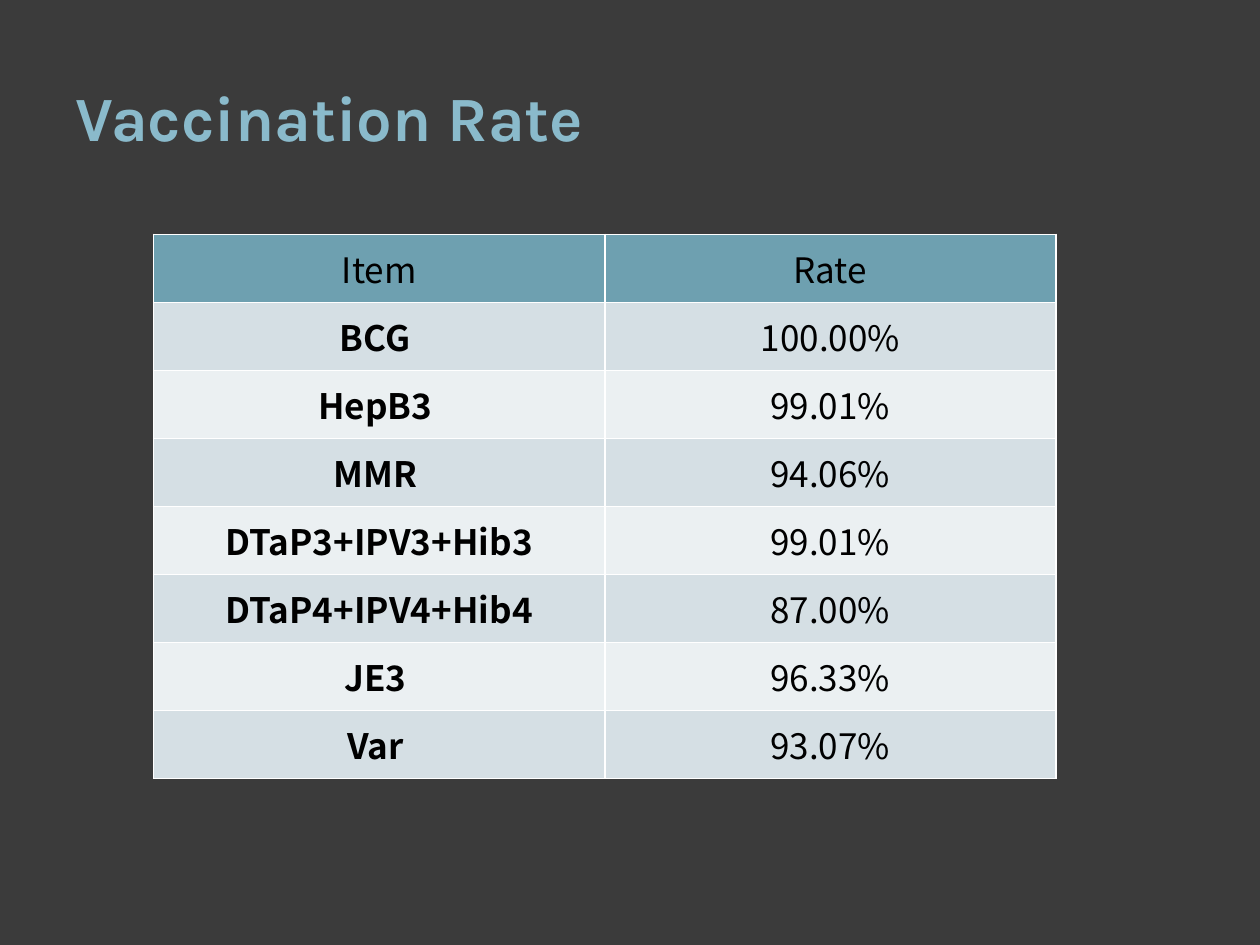
from lxml import etree
from pptx import Presentation
from pptx.dml.color import RGBColor
from pptx.enum.text import MSO_ANCHOR, PP_ALIGN
from pptx.oxml.ns import qn
from pptx.util import Inches, Pt

CENTER, LEFT = PP_ALIGN.CENTER, PP_ALIGN.LEFT
MIDDLE = MSO_ANCHOR.MIDDLE
TITLE_ONLY = 5

BACKGROUND = RGBColor(0x3B, 0x3B, 0x3B)
TITLE_BLUE = RGBColor(0x8A, 0xBA, 0xCB)
HEADER_FILL = RGBColor(0x6E, 0xA0, 0xB0)
BAND_FILLS = (RGBColor(0xEB, 0xF0, 0xF2), RGBColor(0xD5, 0xDF, 0xE4))
BLACK = RGBColor(0, 0, 0)
WHITE = RGBColor(0xFF, 0xFF, 0xFF)

TITLE_FONT = "Karla"
TABLE_FONT = "Noto Sans CJK SC"
COLUMN_WIDTH, ROW_HEIGHT = Inches(3.58), Inches(0.54)

RATES = [
    ("Item", "Rate"),
    ("BCG ", "100.00%"),
    ("HepB3 ", "99.01%"),
    ("MMR ", "94.06%"),
    ("DTaP3+IPV3+Hib3", "99.01%"),
    ("DTaP4+IPV4+Hib4", "87.00%"),
    ("JE3 ", "96.33%"),
    ("Var ", "93.07%"),
]


def format_paragraph(paragraph, font_name, size, color, bold, alignment):
    """Set the alignment and font of a whole paragraph."""
    paragraph.alignment = alignment
    font = paragraph.font
    font.name, font.size, font.bold = font_name, Pt(size), bold
    font.color.rgb = color


def add_title(slide, text):
    """Place and format the title placeholder."""
    title = slide.shapes.title
    title.left, title.top = Inches(0.5), Inches(0.3)
    title.width, title.height = Inches(8.17), Inches(1.25)
    title.text_frame.text = text
    title.text_frame.vertical_anchor = MIDDLE
    format_paragraph(title.text_frame.paragraphs[0], TITLE_FONT, 36, TITLE_BLUE, True, LEFT)


def add_borders(cell, color, width):
    """Draw a solid line on all four sides of a cell."""
    properties = cell._tc.get_or_add_tcPr()
    for side in ("a:lnL", "a:lnR", "a:lnT", "a:lnB"):
        line = etree.SubElement(properties, qn(side), w=str(Pt(width)))
        fill = etree.SubElement(line, qn("a:solidFill"))
        etree.SubElement(fill, qn("a:srgbClr"), val=str(color))


def format_cell(cell, text, fill, bold):
    """Write one table cell with its fill and borders."""
    cell.text = text
    cell.vertical_anchor = MIDDLE
    add_borders(cell, WHITE, 1)
    cell.fill.solid()
    cell.fill.fore_color.rgb = fill
    format_paragraph(cell.text_frame.paragraphs[0], TABLE_FONT, 20, BLACK, bold, CENTER)


def add_rate_table(slide, rows):
    """Add the banded table with a header row and bold item names."""
    column_count = len(rows[0])
    table = slide.shapes.add_table(
        len(rows), column_count, Inches(1.22), Inches(1.86),
        COLUMN_WIDTH * column_count, ROW_HEIGHT * len(rows),
    ).table
    for row_index, row in enumerate(rows):
        fill = BAND_FILLS[row_index % 2] if row_index else HEADER_FILL
        for column_index, text in enumerate(row):
            bold = row_index > 0 and column_index == 0
            format_cell(table.cell(row_index, column_index), text, fill, bold)


def main():
    """Build the vaccination rate slide."""
    presentation = Presentation()
    presentation.slide_width, presentation.slide_height = Inches(10), Inches(7.5)
    slide = presentation.slides.add_slide(presentation.slide_layouts[TITLE_ONLY])
    slide.background.fill.solid()
    slide.background.fill.fore_color.rgb = BACKGROUND
    add_title(slide, "Vaccination Rate")
    add_rate_table(slide, RATES)
    presentation.save("out.pptx")


if __name__ == "__main__":
    main()
